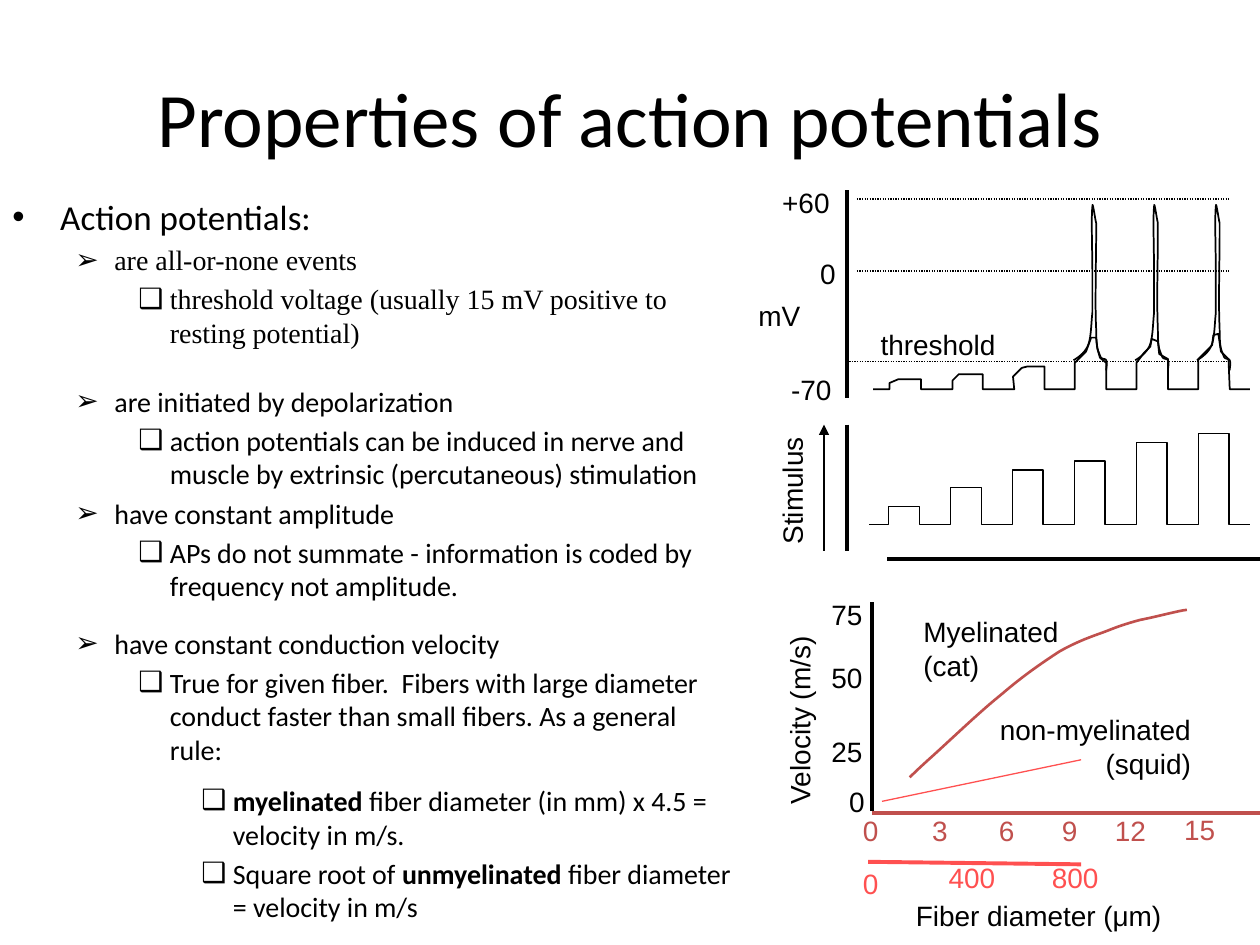
"""Build the slide on the properties of action potentials."""
from lxml.etree import SubElement
from pptx import Presentation
from pptx.dml.color import RGBColor
from pptx.enum.dml import MSO_LINE
from pptx.enum.shapes import MSO_CONNECTOR
from pptx.enum.text import MSO_ANCHOR, MSO_AUTO_SIZE, PP_ALIGN
from pptx.oxml.ns import qn
from pptx.util import Inches, Pt

BLACK, MYELIN, SQUID = "000000", "C0504D", "FF5050"
BULLETS = [("•", 0.38, 0.38), ("➢", 0.81, 0.31), ("❑", 1.25, 0.25), ("❑", 1.75, 0.25)]


def write(frame, text, size=16, font="Arial", color=BLACK, align=PP_ALIGN.LEFT, level=None):
    """Add one paragraph; parts between asterisks are bold."""
    paragraph = frame.paragraphs[0]
    if paragraph.runs:
        paragraph = frame.add_paragraph()
    paragraph.alignment = align
    if level is not None:
        mark, indent, hanging = BULLETS[level]
        paragraph.level = level
        paragraph.space_before = Pt(size * 0.2)
        properties = paragraph._p.get_or_add_pPr()
        properties.set("marL", str(Inches(indent)))
        properties.set("indent", str(-Inches(hanging)))
        SubElement(properties, qn("a:buFont")).set("typeface", "Arial")
        SubElement(properties, qn("a:buChar")).set("char", mark)
    for index, part in enumerate(text.split("*")):
        if part:
            run = paragraph.add_run()
            run.text = part
            run.font.size = Pt(size)
            run.font.name = font
            run.font.bold = index % 2 == 1
            run.font.color.rgb = RGBColor.from_string(color)


def stroke(points, color=BLACK, width=1.0, curved=False):
    """Draw an open outline through points, or along cubic curves."""
    if curved:
        knots, points = points, points[:1]
        for k in range(0, len(knots) - 1, 3):
            for t in [step / 8 for step in range(1, 9)]:
                weights = (1 - t) ** 3, 3 * t * (1 - t) ** 2, 3 * t * t * (1 - t), t ** 3
                points = points + [tuple(sum(w * knot[axis] for w, knot in zip(weights, knots[k:k + 4]))
                                         for axis in (0, 1))]
    corners = [(Inches(x), Inches(y)) for x, y in points]
    builder = slide.shapes.build_freeform(*corners[0])
    builder.add_line_segments(corners[1:], close=False)
    outline = builder.convert_to_shape()
    outline.fill.background()
    outline.line.color.rgb = RGBColor.from_string(color)
    outline.line.width = Pt(width)
    outline.shadow.inherit = False


presentation = Presentation()
presentation.slide_width, presentation.slide_height = Inches(10), Inches(7.5)
slide = presentation.slides.add_slide(presentation.slide_layouts[5])

title = slide.shapes.title
title.left, title.top, title.width, title.height = Inches(0.5), Inches(0.3), Inches(9), Inches(1.25)
title.text_frame.vertical_anchor = MSO_ANCHOR.MIDDLE
write(title.text_frame, "Properties of action potentials", size=44, font="Calibri", align=PP_ALIGN.CENTER)

outline_blocks = [
    (1.5, 5.83, 1.58, [
        (0, "Action potentials:", "Calibri", 20),
        (1, "are all-or-none events", "Times New Roman", 16),
        (2, "threshold voltage (usually 15 mV positive to resting potential)", "Times New Roman", 16)]),
    (3, 6.08, 1.92, [
        (1, "are initiated by depolarization", "Calibri", 16),
        (2, "action potentials can be induced in nerve and muscle by extrinsic (percutaneous) stimulation",
         "Calibri", 16),
        (1, "have constant amplitude", "Calibri", 16),
        (2, "APs do not summate - information is coded by frequency not amplitude.", "Calibri", 16)]),
    (4.92, 5.75, 1.25, [
        (1, "have constant conduction velocity", "Calibri", 16),
        (2, "True for given fiber.  Fibers with large diameter conduct faster than small fibers. "
            "As a general rule:", "Calibri", 16)]),
    (6.17, 5.92, 1.33, [
        (3, "*myelinated* fiber diameter (in mm) x 4.5 = velocity in m/s.", "Calibri", 16),
        (3, "Square root of *unmyelinated* fiber diameter = velocity in m/s", "Calibri", 16)]),
]
for top, width, height, points in outline_blocks:
    frame = slide.shapes.add_textbox(0, Inches(top), Inches(width), Inches(height)).text_frame
    frame.word_wrap = True
    for level, text, font, size in points:
        write(frame, text, size=size, font=font, level=level)

straight_lines = [
    (6.72, 1.51, 6.72, 3.16, BLACK, 2.25),
    (6.72, 3.37, 6.72, 4.37, BLACK, 2.25),
    (7.04, 4.44, 10, 4.44, BLACK, 2.25),
    (6.8, 1.58, 9.75, 1.58, BLACK, 0.75),
    (6.8, 2.15, 9.75, 2.15, BLACK, 0.75),
    (6.72, 2.87, 9.73, 2.87, BLACK, 0.75),
    (6.54, 4.37, 6.54, 3.37, BLACK, 1.5),
    (7, 6.36, 8.58, 6.03, SQUID, 0.75),
    (6.89, 6.84, 8.58, 6.86, SQUID, 2.25),
    (6.92, 4.78, 6.92, 6.44, BLACK, 2.25),
    (6.92, 6.45, 10, 6.45, MYELIN, 2.25),
]
for x1, y1, x2, y2, color, width in straight_lines:
    line = slide.shapes.add_connector(MSO_CONNECTOR.STRAIGHT, Inches(x1), Inches(y1), Inches(x2), Inches(y2))
    line.line.color.rgb = RGBColor.from_string(color)
    line.line.width = Pt(width)
    if color == BLACK and width == 0.75:
        line.line.dash_style = MSO_LINE.ROUND_DOT
    if width == 1.5:
        SubElement(line.line._get_or_add_ln(), qn("a:tailEnd")).set("type", "triangle")
    SubElement(line._element.spPr, qn("a:effectLst"))

stimulus = [(6.9, 4.16)]
for pulse, level in enumerate([4.02, 3.87, 3.73, 3.66, 3.51, 3.44]):
    start = 7.05 + 0.492 * pulse
    end = start + 0.245
    stimulus += [(start, 4.16), (start, level), (end, level), (end, 4.16)]
stroke(stimulus + [(9.92, 4.16)], width=0.75)

stroke([(6.93, 3.09), (7.06, 3.09), (7.06, 3.04), (7.13, 3.01), (7.31, 3.01), (7.31, 3.09),
        (7.56, 3.09), (7.56, 3.02), (7.61, 2.97), (7.8, 2.97), (7.8, 3.09),
        (8.05, 3.09), (8.04, 2.99), (8.11, 2.92), (8.15, 2.91), (8.29, 2.91), (8.29, 3.09),
        (8.53, 3.09), (8.53, 2.88), (8.62, 2.79), (8.66, 2.68), (8.7, 2.68), (8.71, 2.77),
        (8.73, 2.84), (8.78, 2.88), (8.78, 3.09),
        (9.02, 3.09), (9.02, 2.88), (9.08, 2.8), (9.13, 2.75), (9.14, 2.69), (9.19, 2.71),
        (9.2, 2.81), (9.27, 2.85), (9.27, 3.09),
        (9.51, 3.09), (9.51, 2.85), (9.56, 2.8), (9.62, 2.74), (9.63, 2.66), (9.67, 2.65),
        (9.69, 2.79), (9.75, 2.85), (9.76, 3.09), (9.92, 3.09)])

spike = [(0, 2.86), (0.05, 2.83), (0.1, 2.79), (0.12, 2.73), (0.14, 2.67), (0.14, 2.58), (0.15, 2.48),
         (0.15, 2.38), (0.15, 2.28), (0.15, 2.15), (0.15, 2.01), (0.14, 1.71), (0.15, 1.64),
         (0.15, 1.58), (0.17, 1.73), (0.18, 1.77), (0.18, 1.81), (0.18, 1.75), (0.18, 1.89),
         (0.18, 2.03), (0.17, 2.45), (0.18, 2.61), (0.18, 2.76), (0.19, 2.77), (0.21, 2.82),
         (0.22, 2.86), (0.25, 2.84), (0.26, 2.86), (0.27, 2.88), (0.26, 2.92), (0.26, 2.94)]
for start in (8.52, 9.01, 9.5):
    stroke([(start + x, y) for x, y in spike], curved=True)

stroke([(7.22, 6.17), (7.29, 6.1), (7.37, 6.03), (7.49, 5.92), (7.61, 5.81), (7.8, 5.63), (7.95, 5.51),
        (8.1, 5.38), (8.27, 5.26), (8.41, 5.17), (8.55, 5.09), (8.67, 5.05), (8.78, 5.01),
        (8.88, 4.97), (8.94, 4.95), (9.05, 4.92), (9.16, 4.9), (9.34, 4.85), (9.42, 4.84)],
       color=MYELIN, width=1.5, curved=True)

labels = [
    ("threshold", 6.89, 2.55, 1.12, BLACK),
    ("+60", 6.11, 1.42, 0.58, BLACK),
    ("0", 6.41, 1.99, 0.32, BLACK),
    ("-70", 6.18, 2.91, 0.52, BLACK),
    ("mV", 5.92, 2.32, 0.53, BLACK),
    ("Stimulus", 5.73, 3.68, 1.11, BLACK),
    ("Velocity (m/s)", 5.57, 5.52, 1.55, BLACK),
    ("Myelinated\n(cat)", 7.23, 4.83, 1.28, BLACK),
    ("non-myelinated\n(squid)", 7.83, 5.61, 1.72, BLACK),
    ("Fiber diameter (μm)", 7.17, 7.08, 2.16, BLACK),
    ("75", 6.5, 4.69, 0.45, BLACK),
    ("50", 6.5, 5.19, 0.45, BLACK),
    ("25", 6.5, 5.78, 0.45, BLACK),
    ("0", 6.64, 6.18, 0.32, BLACK),
    ("0", 6.75, 6.41, 0.32, MYELIN),
    ("3", 7.3, 6.41, 0.32, MYELIN),
    ("6", 7.83, 6.41, 0.32, MYELIN),
    ("9", 8.33, 6.41, 0.32, MYELIN),
    ("12", 8.75, 6.41, 0.5, MYELIN),
    ("15", 9.3, 6.4, 0.5, MYELIN),
    ("0", 6.75, 6.83, 0.32, SQUID),
    ("400", 7.43, 6.78, 0.57, SQUID),
    ("800", 8.25, 6.78, 0.57, SQUID),
]
for text, left, top, width, color in labels:
    lines = text.split("\n")
    label = slide.shapes.add_textbox(Inches(left), Inches(top), Inches(width), Inches(0.1 + 0.27 * len(lines)))
    label.rotation = 270 if text in ("Stimulus", "Velocity (m/s)") else 0
    label.text_frame.word_wrap = text in ("12", "15")
    label.text_frame.auto_size = MSO_AUTO_SIZE.SHAPE_TO_FIT_TEXT
    for line_text in lines:
        write(label.text_frame, line_text, color=color,
              align=PP_ALIGN.RIGHT if "(squid)" in text else PP_ALIGN.LEFT)

presentation.save("out.pptx")
